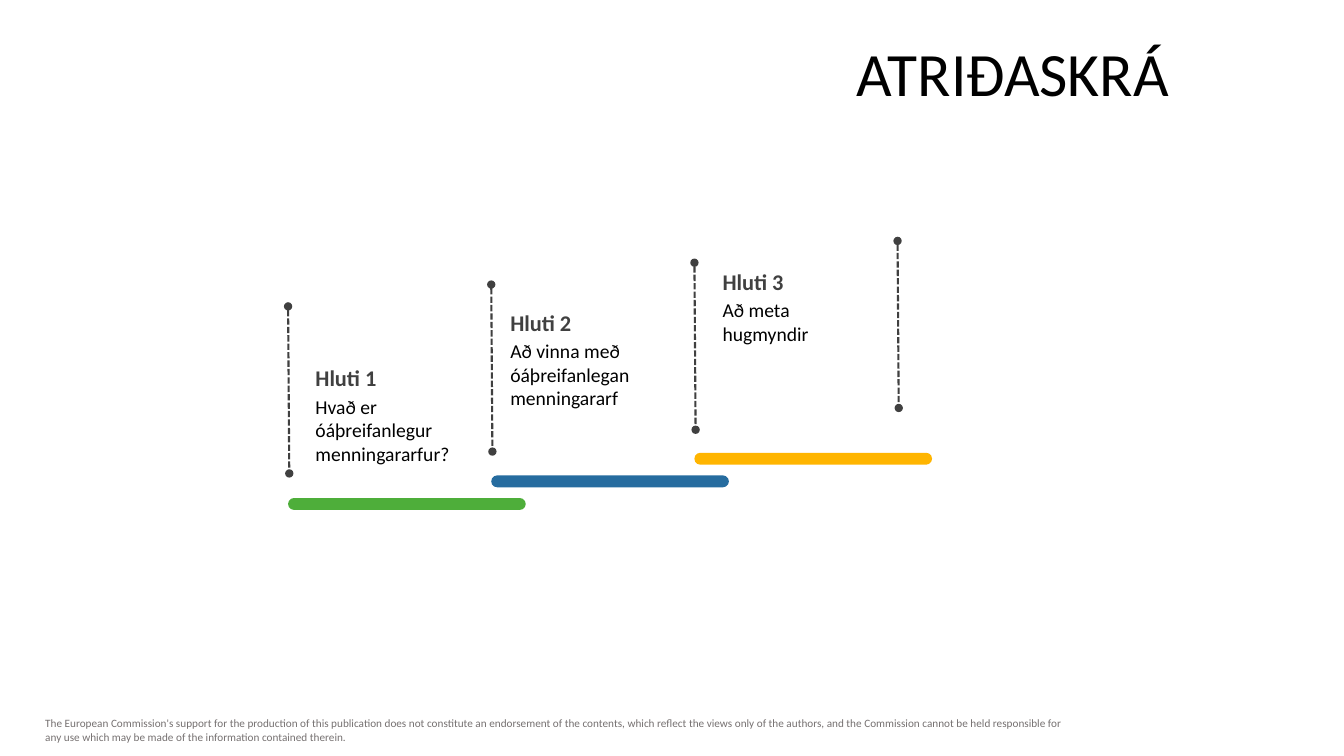
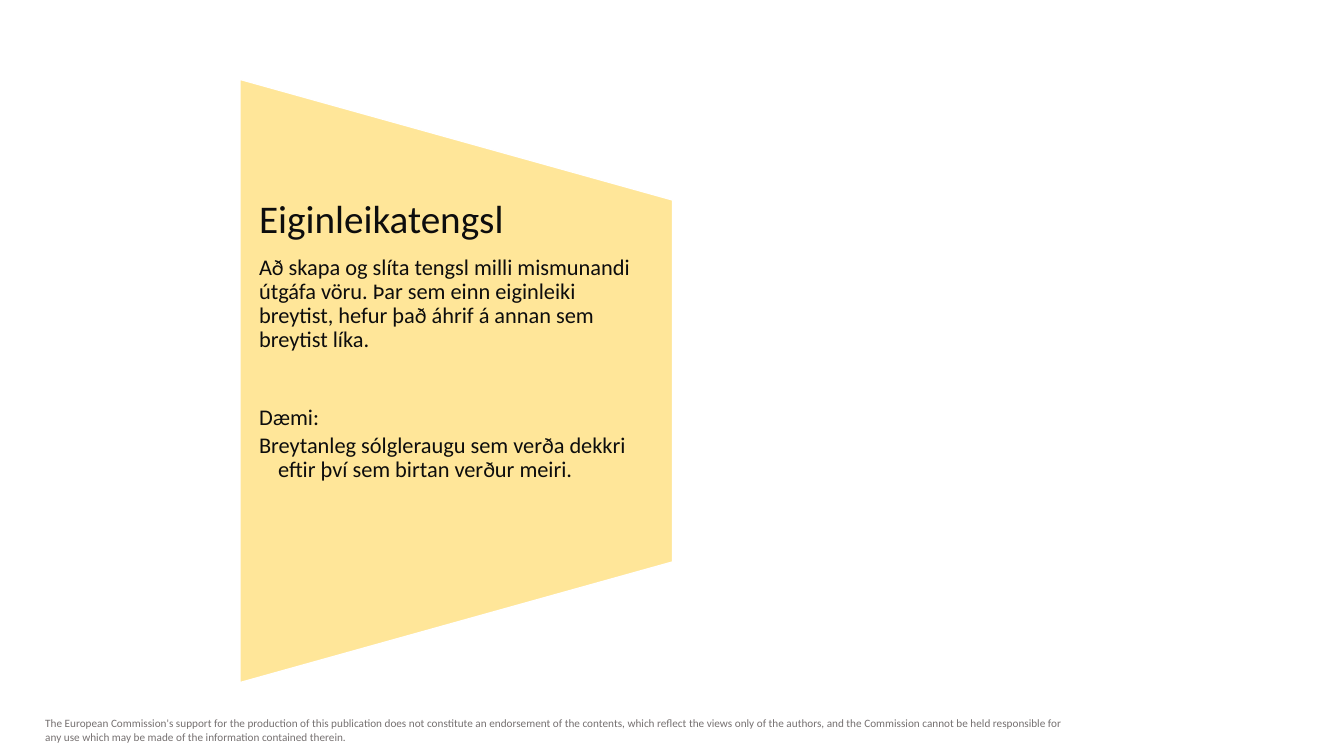
from pptx import Presentation
from pptx.dml.color import RGBColor
from pptx.enum.dml import MSO_LINE
from pptx.enum.shapes import MSO_CONNECTOR, MSO_SHAPE
from pptx.enum.text import MSO_ANCHOR, PP_ALIGN
from pptx.oxml.ns import qn
from pptx.util import Cm, Pt
from lxml.etree import SubElement

FONT = "Calibri"
BLACK = RGBColor(0x00, 0x00, 0x00)
INK = RGBColor(0x0D, 0x0D, 0x0D)
CHARCOAL = RGBColor(0x40, 0x40, 0x40)
GREY = RGBColor(0x76, 0x71, 0x71)
WHITE = RGBColor(0xFF, 0xFF, 0xFF)
GREEN = RGBColor(0x4E, 0xAE, 0x3A)
BLUE = RGBColor(0x26, 0x6C, 0x9F)
AMBER = RGBColor(0xFF, 0xB5, 0x00)
CREAM = RGBColor(0xFF, 0xE6, 0x99)

DISCLAIMER = (
    "The European Commission's support for the production of this publication "
    "does not constitute an endorsement of the contents, which reflect the views "
    "only of the authors, and the Commission cannot be held responsible for any "
    "use which may be made of the information contained therein."
)

STEP_ACROSS = 5.12
POST_RISE = 0.55
BAR_RISE = 0.57
STEPS = [
    ("Hluti 1", "Hvað er óáþreifanlegur menningararfur?", GREEN, 0.39, 1.32),
    ("Hluti 2", "Að vinna með óáþreifanlegan menningararf", BLUE, 0.18, 0.48),
    ("Hluti 3", "Að meta hugmyndir", AMBER, 0.41, 0),
]


def write(para, text, size=14, color=BLACK, bold=False, align=PP_ALIGN.LEFT,
          line_spacing=1.0, after=0, hanging=0):
    if hanging:
        properties = para._p.get_or_add_pPr()
        properties.set("marL", str(Cm(hanging)))
        properties.set("indent", str(-Cm(hanging)))
    para.alignment = align
    para.line_spacing = line_spacing
    para.space_after = Pt(after)
    span = para.add_run()
    span.text = text
    span.font.name = FONT
    span.font.size = Pt(size)
    span.font.bold = bold
    span.font.color.rgb = color


def add_text_frame(page, left, top, width, height, side=0.25, edge=0.13,
                   anchor=MSO_ANCHOR.TOP):
    box = page.shapes.add_textbox(Cm(left), Cm(top), Cm(width), Cm(height))
    frame = box.text_frame
    frame.word_wrap = True
    frame.vertical_anchor = anchor
    frame.margin_left = frame.margin_right = Cm(side)
    frame.margin_top = frame.margin_bottom = Cm(edge)
    return frame


def add_filled_shape(page, kind, left, top, width, height, color):
    shape = page.shapes.add_shape(kind, Cm(left), Cm(top), Cm(width), Cm(height))
    shape.shadow.inherit = False
    shape.fill.solid()
    shape.fill.fore_color.rgb = color
    shape.line.fill.background()
    return shape


def add_page(deck):
    page = deck.slides.add_slide(deck.slide_layouts[6])
    footer = add_text_frame(page, 0.89, 17.93, 26.57, 0.94)
    write(footer.paragraphs[0], DISCLAIMER, size=8, color=GREY)
    return page


def add_title(page, text, left, top, width, height):
    frame = add_text_frame(page, left, top, width, height, anchor=MSO_ANCHOR.MIDDLE)
    write(frame.paragraphs[0], text, size=44, align=PP_ALIGN.RIGHT, line_spacing=0.9)


def add_post(page, left, top):
    post = page.shapes.add_connector(
        MSO_CONNECTOR.STRAIGHT, Cm(left), Cm(top), Cm(left + 0.03), Cm(top + 4.21))
    post.line.color.rgb = CHARCOAL
    post.line.width = Pt(1.5)
    post.line.dash_style = MSO_LINE.SQUARE_DOT
    properties = post._element.spPr
    outline = properties.find(qn("a:ln"))
    for end in ("a:headEnd", "a:tailEnd"):
        SubElement(outline, qn(end), type="oval")
    SubElement(properties, qn("a:effectLst"))


def add_step(page, left, top, heading, body, shift, drop):
    heading_frame = add_text_frame(
        page, left + shift, top + drop, 4.39, 0.94, side=0.3)
    write(heading_frame.paragraphs[0], heading, size=16, color=CHARCOAL, bold=True)
    body_frame = add_text_frame(
        page, left + shift + 0.05, top + drop + 0.77, 4.4, 2.06)
    write(body_frame.paragraphs[0], body)


def add_staircase(page, left, top):
    for index in range(len(STEPS) + 1):
        add_post(page, left + index * STEP_ACROSS, top - index * POST_RISE)
    for index, (heading, body, color, shift, drop) in enumerate(STEPS):
        step_left = left + index * STEP_ACROSS
        bar = add_filled_shape(page, MSO_SHAPE.ROUNDED_RECTANGLE, step_left,
                               top + 4.83 - index * BAR_RISE, 5.99, 0.3, color)
        bar.adjustments[0] = 0.5
        add_step(page, step_left, top - index * POST_RISE, heading, body, shift, drop)


def add_concept_panel(page, left, top, width, height):
    panel = add_filled_shape(
        page, MSO_SHAPE.FLOWCHART_MANUAL_OPERATION,
        left + (width - height) / 2, top + (height - width) / 2,
        height, width, CREAM)
    panel.rotation = 270
    panel.line.color.rgb = WHITE
    panel.line.width = Pt(1)

    frame = add_text_frame(page, left, top + height / 5, width, height * 0.6,
                           side=0.48, edge=0)
    paragraphs = [
        ("Eiginleikatengsl", 28, 9.8, 0),
        ("Að skapa og slíta tengsl milli mismunandi útgáfa vöru. Þar sem einn "
         "eiginleiki breytist, hefur það áhrif á annan sem breytist líka.",
         16, 38.5, 0),
        ("Dæmi:", 16, 2.4, 0.48),
        ("Breytanleg sólgleraugu sem verða dekkri eftir því sem birtan verður "
         "meiri.", 16, 2.4, 0.48),
    ]
    for index, (text, size, after, hanging) in enumerate(paragraphs):
        para = frame.add_paragraph() if index else frame.paragraphs[0]
        write(para, text, size=size, color=INK, line_spacing=0.9, after=after,
              hanging=hanging)


def main():
    deck = Presentation()
    deck.slide_width = Cm(33.87)
    deck.slide_height = Cm(19.05)

    agenda = add_page(deck)
    add_title(agenda, "ATRIÐASKRÁ", 7.85, 0.94, 21.87, 2)
    add_staircase(agenda, 7.26, 7.72)

    concept = add_page(deck)
    add_concept_panel(concept, 6.05, 2, 10.9, 15.2)

    deck.save("out.pptx")


if __name__ == "__main__":
    main()
